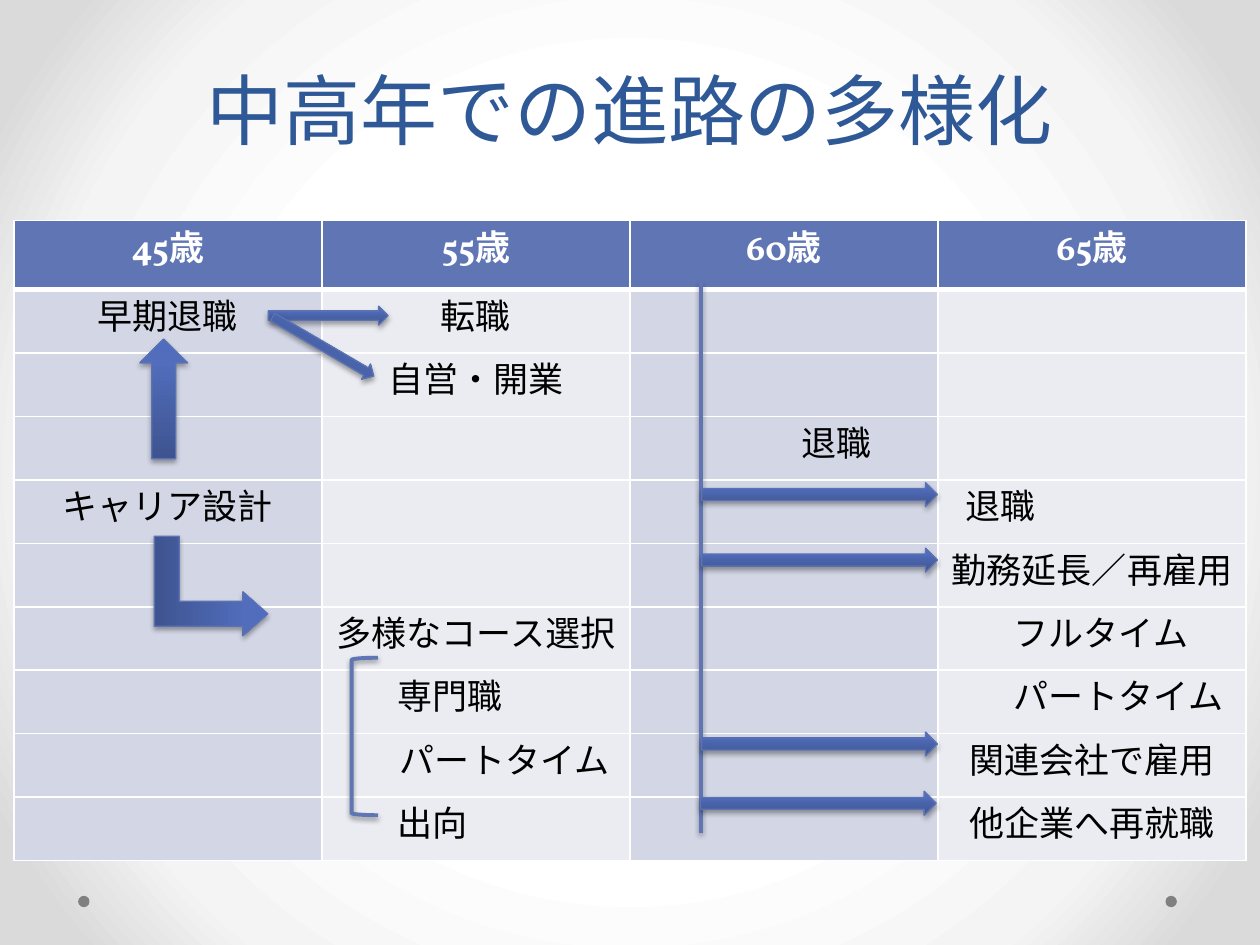
from lxml import etree
from pptx import Presentation
from pptx.dml.color import RGBColor
from pptx.enum.shapes import MSO_CONNECTOR, MSO_SHAPE
from pptx.enum.text import MSO_ANCHOR, PP_ALIGN
from pptx.oxml import parse_xml
from pptx.oxml.ns import nsdecls, qn
from pptx.util import Inches, Pt

LEFT, CENTER = PP_ALIGN.LEFT, PP_ALIGN.CENTER
BOTTOM = MSO_ANCHOR.BOTTOM
STRAIGHT = MSO_CONNECTOR.STRAIGHT
OVAL, BRACKET = MSO_SHAPE.OVAL, MSO_SHAPE.LEFT_BRACKET
UP, RIGHT, BENT = MSO_SHAPE.UP_ARROW, MSO_SHAPE.RIGHT_ARROW, MSO_SHAPE.BENT_UP_ARROW

FONT = "Vollkorn"
TITLE_BLUE = RGBColor(0x2F, 0x58, 0x97)
ACCENT = RGBColor(0x60, 0x76, 0xB4)
ARROW_EDGE = RGBColor(0x5C, 0x72, 0xB2)
BAND_DARK = RGBColor(0xD2, 0xD6, 0xE5)
BAND_LIGHT = RGBColor(0xEA, 0xEC, 0xF2)
DOT_GREY = RGBColor(0x80, 0x80, 0x80)
WHITE = RGBColor(0xFF, 0xFF, 0xFF)
BLACK = RGBColor(0, 0, 0)

PAGE_STOPS = [(50, "FFFFFF"), (76, "F4F4F4"), (92, "DADADA")]
ARROW_STOPS = [(0, "3E5490"), (80, "516DBB"), (100, "4F6CBE")]
RADIAL = '<a:path path="circle"><a:fillToRect l="50000" t="50000" r="50000" b="50000"/></a:path>'
UPWARD = '<a:lin ang="16200000" scaled="0"/>'

HEADERS = ["45歳", "55歳", "60歳", "65歳"]
CELLS = {
    (1, 0): "早期退職", (1, 1): "転職", (2, 1): "自営・開業", (3, 2): "退職",
    (4, 0): "キャリア設計", (4, 3): "退職", (5, 3): "勤務延長／再雇用",
    (6, 1): "多様なコース選択", (6, 3): "フルタイム", (7, 1): "専門職",
    (7, 3): "パートタイム", (8, 1): "パートタイム", (8, 3): "関連会社で雇用",
    (9, 1): "出向", (9, 3): "他企業へ再就職",
}
INDENTS = {(3, 2): 1.26, (4, 3): 0.12, (6, 3): 0.5, (7, 1): 0.5,
           (7, 3): 0.5, (8, 1): 0.52, (9, 1): 0.5}
ROWS = 10
TABLE_HEIGHT, HEADER_HEIGHT = 5.08, 0.55

ARROWS = [
    (UP, 1.11, 2.69, 0.38, 0.95, 0, ()),
    (BENT, 1.28, 4.2, 0.79, 0.9, 90, (0.25, 0.22, 0.25)),
    (RIGHT, 5.57, 3.83, 1.87, 0.19, 0, ()),
    (RIGHT, 5.57, 4.35, 1.87, 0.19, 0, ()),
    (RIGHT, 5.57, 5.81, 1.87, 0.19, 0, ()),
    (RIGHT, 5.56, 6.28, 1.87, 0.19, 0, ()),
    (RIGHT, 2.13, 2.43, 0.95, 0.15, 0, ()),
    (RIGHT, 2.1, 2.68, 0.93, 0.14, 30.3, ()),
]


def set_gradient(fill, parent, stops, direction):
    """Give the parent element a gradient fill with the given stops."""
    fill.solid()
    marks = "".join(f'<a:gs pos="{place * 1000}"><a:srgbClr val="{color}"/></a:gs>'
                    for place, color in stops)
    gradient = parse_xml(f'<a:gradFill {nsdecls("a")} rotWithShape="1">'
                         f'<a:gsLst>{marks}</a:gsLst>{direction}</a:gradFill>')
    parent.replace(parent.find(qn("a:solidFill")), gradient)


def add_shadow(item, alpha, distance):
    """Put a soft black shadow below a shape or connector."""
    effects = etree.SubElement(item.element.spPr, qn("a:effectLst"))
    shadow = etree.SubElement(effects, qn("a:outerShdw"), blurRad=str(Pt(3.1)),
                              dist=str(Pt(distance)), dir="5400000", rotWithShape="0")
    color = etree.SubElement(shadow, qn("a:srgbClr"), val="000000")
    etree.SubElement(color, qn("a:alpha"), val=str(alpha * 1000))


def add_span(para, text, size, color, bold=False):
    """Add one run of text, with the font set for Japanese too."""
    span = para.add_run()
    span.text = text
    span.font.size = Pt(size)
    span.font.bold = bold
    span.font.color.rgb = color
    span.font.name = FONT
    etree.SubElement(span.font._element, qn("a:ea"), typeface=FONT)


def add_background(page):
    """Paint the page with a radial white to grey gradient."""
    fill = page.background.fill
    fill.solid()
    set_gradient(fill, page.element.find(".//" + qn("p:bgPr")), PAGE_STOPS, RADIAL)


def add_dot(page, left):
    """Add a small grey footer dot."""
    dot = page.shapes.add_shape(OVAL, Inches(left), Inches(7.11), Inches(0.09), Inches(0.09))
    dot.shadow.inherit = False
    dot.fill.solid()
    dot.fill.fore_color.rgb = DOT_GREY
    dot.line.fill.background()


def add_title(page, text):
    """Add the centred page title."""
    box = page.shapes.add_textbox(Inches(0.5), Inches(0.34), Inches(9), Inches(0.94))
    frame = box.text_frame
    frame.word_wrap = True
    frame.vertical_anchor = BOTTOM
    para = frame.paragraphs[0]
    para.alignment = CENTER
    para.line_spacing = Pt(58)
    add_span(para, text, 44, TITLE_BLUE)


def style_cell(cell, color, bottom_width):
    """Set the white borders and the fill of a cell."""
    properties = cell._tc.get_or_add_tcPr()
    for side, width in (("L", 1), ("R", 1), ("T", 1), ("B", bottom_width)):
        border = etree.SubElement(properties, qn("a:ln" + side), w=str(Pt(width)))
        paint = etree.SubElement(border, qn("a:solidFill"))
        etree.SubElement(paint, qn("a:srgbClr"), val=str(WHITE))
    cell.fill.solid()
    cell.fill.fore_color.rgb = color


def add_career_table(page):
    """Add the table of career paths by age."""
    table = page.shapes.add_table(ROWS, len(HEADERS), Inches(0.11), Inches(1.75),
                                  Inches(9.78), Inches(TABLE_HEIGHT)).table
    body_height = (TABLE_HEIGHT - HEADER_HEIGHT) / (ROWS - 1)
    for row in range(ROWS):
        is_header = row == 0
        table.rows[row].height = Inches(HEADER_HEIGHT if is_header else body_height)
        for column, header in enumerate(HEADERS):
            cell = table.cell(row, column)
            band = BAND_LIGHT if column % 2 else BAND_DARK
            style_cell(cell, ACCENT if is_header else band, 3 if is_header else 1)
            para = cell.text_frame.paragraphs[0]
            para.font.size = Pt(20)
            indent = INDENTS.get((row, column))
            para.alignment = LEFT if indent else CENTER
            if indent:
                cell.margin_left = Inches(0.1 + indent)
                cell.margin_right = 0
            text = header if is_header else CELLS.get((row, column))
            if text:
                add_span(para, text, 20, WHITE if is_header else BLACK, is_header)


def add_arrow(page, kind, left, top, width, height, rotation, adjustments):
    """Add a shaded block arrow."""
    arrow = page.shapes.add_shape(kind, Inches(left), Inches(top), Inches(width), Inches(height))
    arrow.rotation = rotation
    for index, value in enumerate(adjustments):
        arrow.adjustments[index] = value
    set_gradient(arrow.fill, arrow.element.spPr, ARROW_STOPS, UPWARD)
    arrow.line.color.rgb = ARROW_EDGE
    arrow.line.width = Pt(0.75)
    add_shadow(arrow, 35, 1.8)


def style_outline(item):
    """Give a line or bracket its accent stroke and shadow."""
    item.line.color.rgb = ACCENT
    item.line.width = Pt(2.25)
    add_shadow(item, 38, 1.6)


def add_age_line(page):
    """Add the vertical line that marks age sixty."""
    line = page.shapes.add_connector(STRAIGHT, Inches(5.56), Inches(2.24),
                                     Inches(5.56), Inches(6.61))
    style_outline(line)


def add_course_bracket(page):
    """Add the bracket that groups the course choices."""
    bracket = page.shapes.add_shape(BRACKET, Inches(2.79), Inches(5.22),
                                    Inches(0.21), Inches(1.25))
    bracket.fill.background()
    style_outline(bracket)


def main():
    """Build and save the slide."""
    deck = Presentation()
    deck.slide_width, deck.slide_height = Inches(10), Inches(7.5)
    page = deck.slides.add_slide(deck.slide_layouts[6])
    add_background(page)
    for left in (9.25, 0.62):
        add_dot(page, left)
    add_title(page, "中高年での進路の多様化")
    add_career_table(page)
    add_age_line(page)
    for arrow in ARROWS:
        add_arrow(page, *arrow)
    add_course_bracket(page)
    deck.save("out.pptx")


if __name__ == "__main__":
    main()
